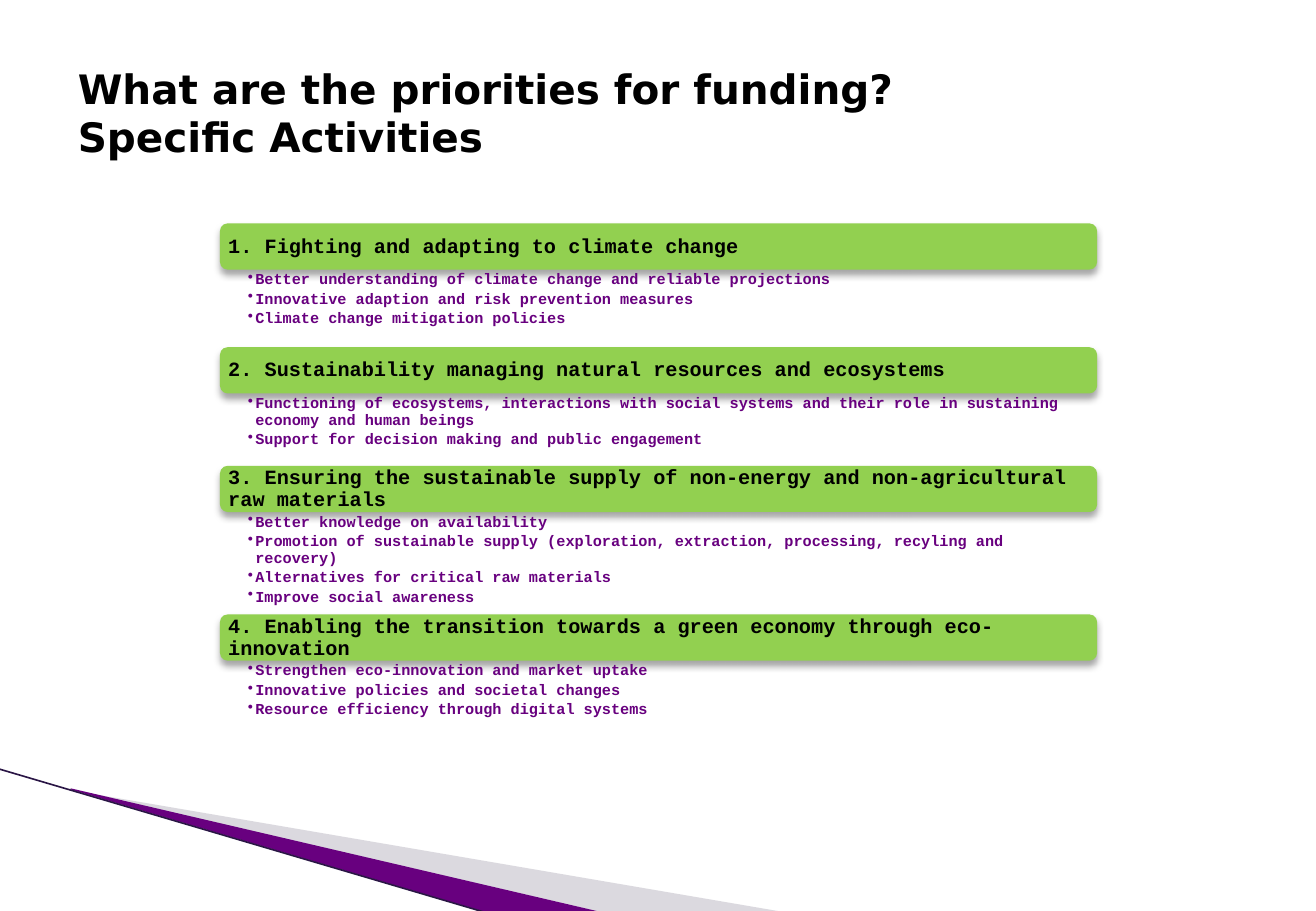
"""Build the slide on funding priorities and their specific activities."""
from dataclasses import dataclass

from lxml.etree import SubElement
from pptx import Presentation
from pptx.dml.color import RGBColor
from pptx.enum.shapes import MSO_CONNECTOR as Connector, MSO_SHAPE as Shape
from pptx.enum.text import MSO_ANCHOR as Anchor, MSO_AUTO_SIZE as AutoSize, PP_ALIGN as Align
from pptx.oxml.ns import qn
from pptx.util import Pt


@dataclass(frozen=True)
class Theme:
    black: str = "000000"
    purple: str = "68007F"
    green: str = "92D050"
    grey: str = "A7A2B1"
    edge: str = "2A1545"
    title_font: str = "DejaVu Sans"
    body_font: str = "Courier New"
    title_size: float = 24
    heading_size: float = 12
    bullet_size: float = 9


theme = Theme()


def add_span(para, text, font, size, colour):
    span = para.add_run()
    span.text = text
    span.font.name = font
    span.font.size = Pt(size)
    span.font.bold = True
    span.font.color.rgb = RGBColor.from_string(colour)


def set_frame(frame, anchor, left, top, right, bottom):
    frame.word_wrap = True
    frame.auto_size = AutoSize.NONE
    frame.vertical_anchor = anchor
    frame.margin_left, frame.margin_top = Pt(left), Pt(top)
    frame.margin_right, frame.margin_bottom = Pt(right), Pt(bottom)


deck = Presentation()
deck.slide_width, deck.slide_height = Pt(779.76), Pt(540)
page = deck.slides.add_slide(deck.slide_layouts[5])

wedges = [
    (theme.grey, 40, [(42.5, 468.5), (463.7, 540.5), (355.7, 540.5), (42.5, 468)]),
    (theme.purple, 100, [(41.8, 467.3), (356.4, 540.7), (290.2, 541.4), (41.8, 468)]),
]
for colour, opacity, corners in wedges:
    points = [(Pt(x), Pt(y)) for x, y in corners]
    builder = page.shapes.build_freeform(*points[0], scale=1.0)
    builder.add_line_segments(points[1:], close=True)
    wedge = builder.convert_to_shape()
    wedge.shadow.inherit = False
    wedge.fill.solid()
    wedge.fill.fore_color.rgb = RGBColor.from_string(colour)
    wedge.line.fill.background()
    if opacity < 100:
        tint = wedge.fill._xPr.find(".//" + qn("a:srgbClr"))
        SubElement(tint, qn("a:alpha"), val=str(opacity * 1000))

edge = page.shapes.add_connector(Connector.STRAIGHT, Pt(-0.7), Pt(455.8), Pt(289.4), Pt(541.4))
edge.line.color.rgb = RGBColor.from_string(theme.edge)
edge.line.width = Pt(0.95)
SubElement(edge._element.spPr, qn("a:effectLst"))

title = page.shapes.title
title.left, title.top, title.width, title.height = Pt(38.9), Pt(21.6), Pt(614.9), Pt(90)
set_frame(title.text_frame, Anchor.MIDDLE, 7.2, 3.6, 7.2, 3.6)
para = title.text_frame.paragraphs[0]
para.alignment = Align.LEFT
add_span(para, "What are the priorities for funding?", theme.title_font, theme.title_size, theme.black)
para.add_line_break()
add_span(para, "Specific Activities", theme.title_font, theme.title_size, theme.black)

priorities = [
    ("1. Fighting and adapting to climate change", 46, [
        "Better understanding of climate change and reliable projections",
        "Innovative adaption and risk prevention measures",
        "Climate change mitigation policies",
    ]),
    ("2. Sustainability managing natural resources and ecosystems", 42.9, [
        "Functioning of ecosystems, interactions with social systems and their role in "
        "sustaining economy and human beings",
        "Support for decision making and public engagement",
    ]),
    ("3. Ensuring the sustainable supply of non-energy and non-agricultural raw materials", 60.7, [
        "Better knowledge on availability",
        "Promotion of sustainable supply (exploration, extraction, processing, recyling and recovery)",
        "Alternatives for critical raw materials",
        "Improve social awareness",
    ]),
    ("4. Enabling the transition towards a green economy through eco-innovation", 46, [
        "Strengthen eco-innovation and market uptake",
        "Innovative policies and societal changes",
        "Resource efficiency through digital systems",
    ]),
]
left, top, width, bar_height = 130.3, 132.4, 519.8, 27.4

for heading, list_height, activities in priorities:
    bar = page.shapes.add_shape(Shape.ROUNDED_RECTANGLE, Pt(left), Pt(top), Pt(width), Pt(bar_height))
    bar.fill.solid()
    bar.fill.fore_color.rgb = RGBColor.from_string(theme.green)
    bar.line.fill.background()
    bar.shadow.inherit = False
    shadow = SubElement(bar._element.spPr.find(qn("a:effectLst")), qn("a:outerShdw"),
                        blurRad=str(Pt(4)), dist=str(Pt(3)), dir="5400000", rotWithShape="0")
    shade = SubElement(shadow, qn("a:srgbClr"), val=theme.black)
    SubElement(shade, qn("a:alpha"), val="35000")
    set_frame(bar.text_frame, Anchor.MIDDLE, 3.6, 3.6, 3.6, 3.6)
    para = bar.text_frame.paragraphs[0]
    para.alignment = Align.LEFT
    para.line_spacing = 0.9
    add_span(para, heading, theme.body_font, theme.heading_size, theme.black)
    top += bar_height

    box = page.shapes.add_textbox(Pt(left), Pt(top), Pt(width), Pt(list_height))
    set_frame(box.text_frame, Anchor.TOP, 16.5, 1.2, 6.5, 1.2)
    for index, activity in enumerate(activities):
        para = box.text_frame.add_paragraph() if index else box.text_frame.paragraphs[0]
        para.level = 1
        para.line_spacing = 0.9
        para.space_after = Pt(1.8)
        settings = para._p.get_or_add_pPr()
        settings.set("marL", str(Pt(4.5)))
        settings.set("indent", str(Pt(-4.5)))
        SubElement(settings, qn("a:buChar"), char="•")
        add_span(para, activity, theme.body_font, theme.bullet_size, theme.purple)
    top += list_height

deck.save("out.pptx")
